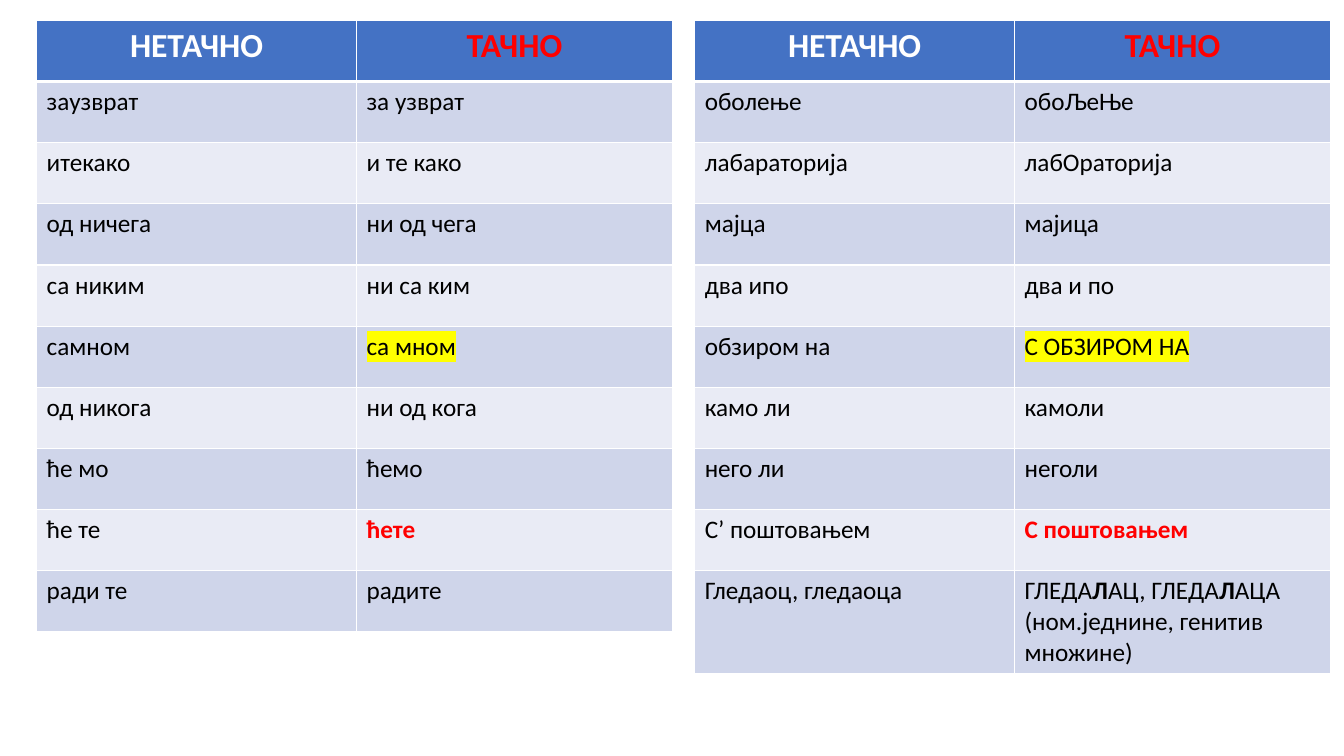
"""Builds a slide with two tables of wrong and right Serbian spellings."""
from dataclasses import dataclass

from lxml import etree
from pptx import Presentation
from pptx.dml.color import RGBColor
from pptx.enum.text import PP_ALIGN
from pptx.oxml.ns import qn
from pptx.util import Pt

CENTER, LEFT = PP_ALIGN.CENTER, PP_ALIGN.LEFT
BLANK_LAYOUT = 6


@dataclass(frozen=True)
class Theme:
    """Colours, type sizes and line widths of the slide."""
    font: str = "Calibri"
    header_size: int = 24
    body_size: int = 18
    header_fill: str = "4472C4"
    bands: tuple = ("CFD5EA", "E9EBF5")
    white: str = "FFFFFF"
    black: str = "000000"
    red: str = "FF0000"
    yellow: str = "FFFF00"
    border: int = 1
    header_border: int = 3


THEME = Theme()
PLAIN = {"size": THEME.body_size, "color": THEME.black, "bold": False}
MARKED = {**PLAIN, "highlight": THEME.yellow}
STRONG = {**PLAIN, "color": THEME.red, "bold": True}
HEADER = {"size": THEME.header_size, "color": THEME.white, "bold": True}
HEADER_RIGHT = {**HEADER, "color": THEME.red}

HEADINGS = (("НЕТАЧНО", HEADER), ("ТАЧНО", HEADER_RIGHT))
WORD_PAIRS = [
    ("заузврат", "за узврат", PLAIN),
    ("итекако", "и те како", PLAIN),
    ("од ничега", "ни од чега", PLAIN),
    ("са никим", "ни са ким", PLAIN),
    ("самном", "са мном", MARKED),
    ("од никога", "ни од кога", PLAIN),
    ("ће мо", "ћемо", PLAIN),
    ("ће те", "ћете", STRONG),
    ("ради те", "радите", PLAIN),
]
PHRASE_PAIRS = [
    ("оболење", "обоЉеЊе", PLAIN),
    ("лабараторија", "лабОраторија", PLAIN),
    ("мајца", "мајица", PLAIN),
    ("два ипо", "два и по", PLAIN),
    ("обзиром на", "С ОБЗИРОМ НА", MARKED),
    ("камо ли", "камоли", PLAIN),
    ("него ли", "неголи", PLAIN),
    ("С’ поштовањем", "С поштовањем", STRONG),
    ("Гледаоц, гледаоца",
     "ГЛЕДА*Л*АЦ, ГЛЕДА*Л*АЦА\n(ном.једнине, генитив множине)", PLAIN),
]

TABLE_TOP = 14.6
TABLE_LEFTS = (26.2, 496.2)
COLUMN_WIDTHS = (228.5, 225.5)
ROW_HEIGHT = 43.7
TALL_ROW_HEIGHT = 72


def add_run(paragraph, text, style, bold):
    """Add one formatted run to a paragraph."""
    run = paragraph.add_run()
    run.text = text
    font = run.font
    font.color.rgb = RGBColor.from_string(style["color"])
    for name, value in {"name": THEME.font, "size": Pt(style["size"]), "bold": bold}.items():
        setattr(font, name, value)
    if "highlight" in style:
        highlight = etree.Element(qn("a:highlight"))
        etree.SubElement(highlight, qn("a:srgbClr"), val=style["highlight"])
        run._r.rPr.find(qn("a:solidFill")).addnext(highlight)


def add_border(cell, side, width):
    """Draw a white border on one side of a cell."""
    line = etree.SubElement(cell._tc.get_or_add_tcPr(), qn(f"a:ln{side}"), w=str(Pt(width)))
    fill = etree.SubElement(line, qn("a:solidFill"))
    etree.SubElement(fill, qn("a:srgbClr"), val=THEME.white)


def fill_cell(cell, text, style, row):
    """Write a cell, with asterisks around bold letters, and colour it by its row."""
    for side in "LRTB":
        below_header = (row, side) in ((0, "B"), (1, "T"))
        add_border(cell, side, THEME.header_border if below_header else THEME.border)
    color = THEME.bands[(row - 1) % 2] if row else THEME.header_fill
    cell.fill.solid()
    cell.fill.fore_color.rgb = RGBColor.from_string(color)
    frame = cell.text_frame
    for index, line in enumerate(text.split("\n")):
        paragraph = frame.add_paragraph() if index else frame.paragraphs[0]
        paragraph.alignment = LEFT if row else CENTER
        for part, letters in enumerate(line.split("*")):
            add_run(paragraph, letters, style, style["bold"] or part % 2 == 1)


def add_spelling_table(slide, left, pairs):
    """Add a table of wrong and right spellings."""
    rows = [HEADINGS] + [((wrong, PLAIN), (right, style)) for wrong, right, style in pairs]
    heights = [TALL_ROW_HEIGHT if "\n" in cells[1][0] else ROW_HEIGHT for cells in rows]
    table = slide.shapes.add_table(
        len(rows), len(COLUMN_WIDTHS), Pt(left), Pt(TABLE_TOP),
        Pt(sum(COLUMN_WIDTHS)), Pt(sum(heights))).table
    for column, width in zip(table.columns, COLUMN_WIDTHS):
        column.width = Pt(width)
    for row, (cells, height) in enumerate(zip(rows, heights)):
        table.rows[row].height = Pt(height)
        for column, (text, style) in enumerate(cells):
            fill_cell(table.cell(row, column), text, style, row)


def main():
    """Build and save the slide."""
    presentation = Presentation()
    presentation.slide_width, presentation.slide_height = Pt(960), Pt(540)
    slide = presentation.slides.add_slide(presentation.slide_layouts[BLANK_LAYOUT])
    for left, pairs in zip(TABLE_LEFTS, (WORD_PAIRS, PHRASE_PAIRS)):
        add_spelling_table(slide, left, pairs)
    presentation.save("out.pptx")


if __name__ == "__main__":
    main()
